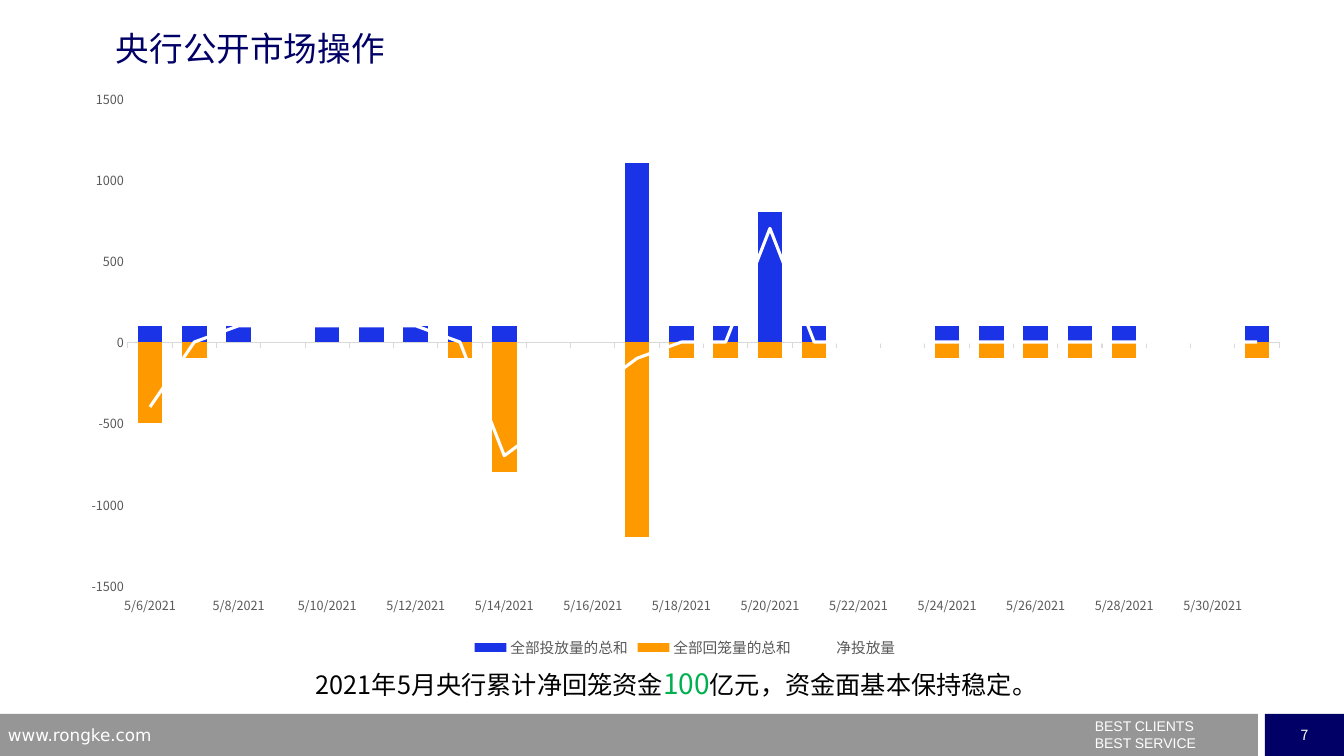
"""Build the slide on central bank open market operations."""
from lxml import etree
from pptx import Presentation
from pptx import util as u
from pptx.chart.data import CategoryChartData
from pptx.dml.color import RGBColor
from pptx.enum import chart as kinds, shapes, text
from pptx.oxml import parse_xml
from pptx.oxml.ns import nsdecls, qn

NAVY = RGBColor(0, 0, 0x66)
GREY = RGBColor(0x96, 0x96, 0x96)
WHITE = RGBColor(255, 255, 255)
BLACK = RGBColor(0, 0, 0)
GREEN = RGBColor(0, 0xB0, 0x50)
BLUE = RGBColor(0x1B, 0x33, 0xE7)
ORANGE = RGBColor(0xFF, 0x99, 0)
LABEL = RGBColor(0x59, 0x59, 0x59)
AXIS = RGBColor(0xD9, 0xD9, 0xD9)
CJK = "Noto Sans CJK SC"
PX = 914400 / 100.8

TITLE = "央行公开市场操作"
CAPTION = [("2021年5月央行累计净回笼资金", 18, BLACK), ("100", 20, GREEN),
           ("亿元，资金面基本保持稳定。", 18, BLACK)]
MOTTO = ["BEST CLIENTS", "BEST SERVICE"]
DATES = [44347, 44344, 44343, 44342, 44341, 44340, 44337, 44336, 44335, 44334,
         44333, 44330, 44329, 44328, 44327, 44326, 44324, 44323, 44322]
INJECTED = [100] * 7 + [800, 100, 100, 1100] + [100] * 8
WITHDRAWN = [-100] * 10 + [-1200, -800, -100, 0, 0, 0, 0, -100, -500]
SERIES = [("全部投放量的总和", INJECTED, BLUE), ("全部回笼量的总和", WITHDRAWN, ORANGE),
          ("净投放量", [a + b for a, b in zip(INJECTED, WITHDRAWN)], WHITE)]
PLOT_AREA = {"x": 0.05, "y": 0.04, "w": 0.93, "h": 0.83}


def place(*lengths):
    return [u.Emu(round(length * PX)) for length in lengths]


def style(font, size, color, name=CJK):
    font.size, font.name, font.bold = u.Pt(size), name, False
    font.color.rgb = color


def write(para, words, size=10, color=WHITE, name=CJK):
    span = para.add_run()
    span.text = words
    style(span.font, size, color, name)
    east = etree.SubElement(span.font._element, qn("a:ea"))
    east.set("typeface", name)


def add_box(page, *at):
    box = page.shapes.add_textbox(*place(*at))
    box.text_frame.word_wrap = True
    return box.text_frame


def add_bar(page, color, *at):
    bar = page.shapes.add_shape(shapes.MSO_SHAPE.RECTANGLE, *place(*at))
    bar.shadow.inherit = False
    bar.fill.solid()
    bar.fill.fore_color.rgb = color
    bar.line.fill.background()
    return bar


def add_footer(page):
    add_bar(page, GREY, 0, 714, 1258, 42)
    frame = add_bar(page, NAVY, 1265, 714, 79, 42).text_frame
    frame.vertical_anchor = text.MSO_ANCHOR.MIDDLE
    frame.paragraphs[0].alignment = text.PP_ALIGN.CENTER
    write(frame.paragraphs[0], "7")
    frame = add_box(page, 1085, 720, 202, 36)
    for index, words in enumerate(MOTTO):
        para = frame.add_paragraph() if index else frame.paragraphs[0]
        para.line_spacing = 0.5
        para.space_before = u.Pt(5.7 if index else 0)
        write(para, words, name="Arial")
    site = add_box(page, -2, 720, 325, 26)
    write(site.paragraphs[0], "www.rongke.com", 12, name="DejaVu Sans")


def move_to_line(chart):
    bars = chart.plots[0]._element
    net = bars.findall(qn("c:ser"))[-1]
    for flag in net.findall(qn("c:invertIfNegative")):
        net.remove(flag)
    line = parse_xml(f'<c:lineChart {nsdecls("c")}><c:grouping val="standard"/>'
                     '<c:varyColors val="0"/><c:marker val="1"/></c:lineChart>')
    line.insert(2, net)
    for axis in bars.findall(qn("c:axId")):
        etree.SubElement(line, qn("c:axId")).set("val", axis.get("val"))
    bars.addnext(line)


def set_plot_area(chart):
    area = chart._chartSpace.chart.plotArea
    for old in area.findall(qn("c:layout")):
        area.remove(old)
    modes = '<c:layoutTarget val="inner"/><c:xMode val="edge"/><c:yMode val="edge"/>'
    sizes = "".join(f'<c:{key} val="{value}"/>' for key, value in PLOT_AREA.items())
    area.insert(0, parse_xml(f'<c:layout {nsdecls("c")}><c:manualLayout>{modes}{sizes}'
                             '</c:manualLayout></c:layout>'))


def add_operations_chart(page):
    data = CategoryChartData()
    data.categories = DATES
    data.categories.number_format = "m/d/yyyy"
    for name, values, _ in SERIES:
        data.add_series(name, values)
    chart = page.shapes.add_chart(kinds.XL_CHART_TYPE.COLUMN_STACKED,
                                  *place(66, 75, 1238, 587), data).chart
    style(chart.font, 10, BLACK)
    chart.has_title = False
    chart.has_legend = True
    chart.legend.position = kinds.XL_LEGEND_POSITION.BOTTOM
    chart.legend.include_in_layout = False
    style(chart.legend.font, 10.5, LABEL)
    dates, amounts = chart.category_axis, chart.value_axis
    for axis in (dates, amounts):
        style(axis.tick_labels.font, 9, LABEL)
        axis.has_major_gridlines = False
    dates.tick_labels.number_format = "m/d/yyyy"
    dates.tick_labels.number_format_is_linked = False
    dates.tick_label_position = kinds.XL_TICK_LABEL_POSITION.LOW
    dates.major_tick_mark = kinds.XL_TICK_MARK.OUTSIDE
    dates.format.line.color.rgb = AXIS
    dates.format.line.width = u.Pt(0.75)
    amounts.minimum_scale, amounts.maximum_scale, amounts.major_unit = -1500, 1500, 500
    amounts.major_tick_mark = kinds.XL_TICK_MARK.NONE
    amounts.format.line.fill.background()
    move_to_line(chart)
    set_plot_area(chart)
    bars, line = chart.plots
    bars.gap_width, bars.overlap, bars.vary_by_categories = 80, 100, False
    for series, (_, _, color) in zip(bars.series, SERIES):
        series.invert_if_negative = False
        series.format.fill.solid()
        series.format.fill.fore_color.rgb = color
    net = line.series[0]
    net.smooth = False
    net.marker.style = kinds.XL_MARKER_STYLE.NONE
    net.format.line.color.rgb = SERIES[-1][2]
    net.format.line.width = u.Pt(2.25)


def main():
    deck = Presentation()
    deck.slide_width, deck.slide_height = place(1344, 756)
    page = deck.slides.add_slide(deck.slide_layouts[5])
    add_footer(page)
    title = page.shapes.title
    title.left, title.top, title.width, title.height = place(116, 28, 907, 57)
    frame = title.text_frame
    frame.margin_left = frame.margin_top = frame.margin_right = frame.margin_bottom = 0
    frame.auto_size = text.MSO_AUTO_SIZE.NONE
    frame.vertical_anchor = text.MSO_ANCHOR.TOP
    frame.paragraphs[0].alignment = text.PP_ALIGN.LEFT
    write(frame.paragraphs[0], TITLE, 24, NAVY)
    caption = add_box(page, 306, 662, 782, 44)
    for words, size, color in CAPTION:
        write(caption.paragraphs[0], words, size, color)
    add_operations_chart(page)
    deck.save("out.pptx")


if __name__ == "__main__":
    main()
